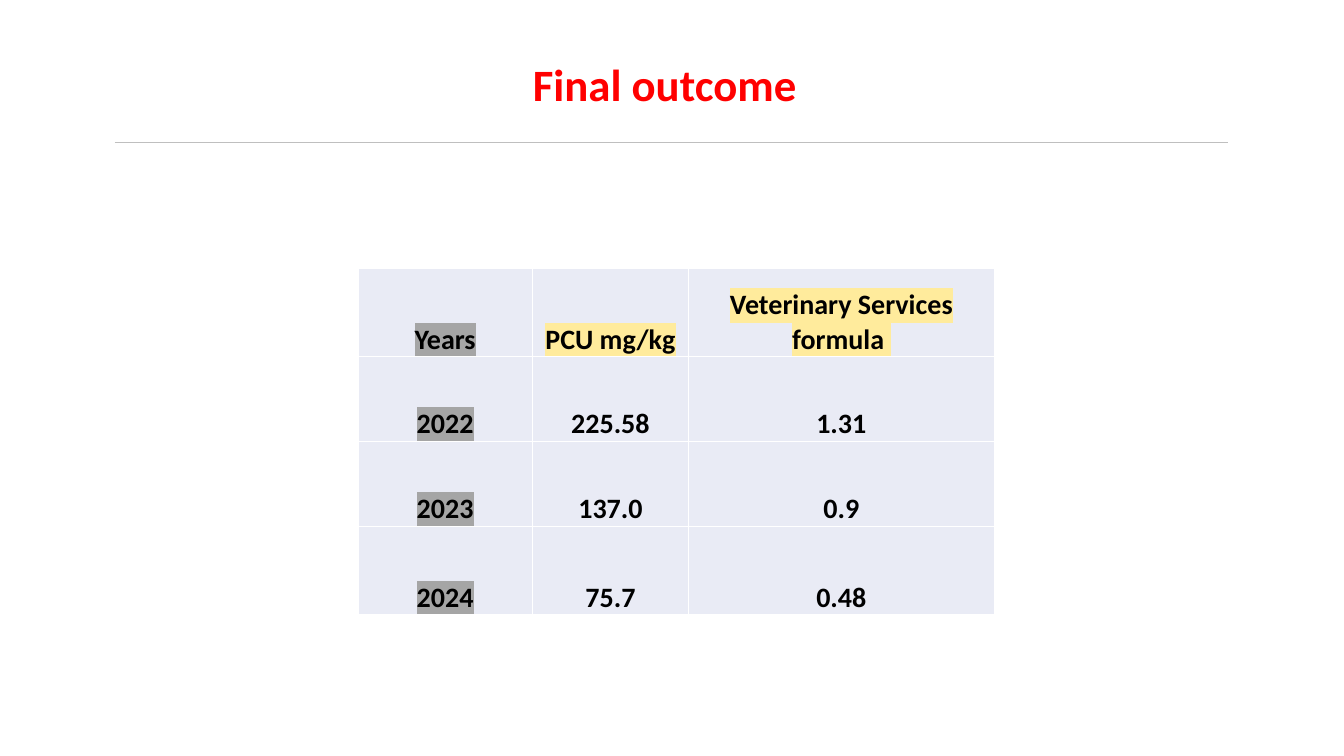
import pptx
import pptx.dml.color
import pptx.enum.shapes
import pptx.enum.text
import pptx.oxml.ns
import pptx.util
from lxml import etree

Inches = pptx.util.Inches
Pt = pptx.util.Pt
COLORS = {
    "title": "FF0000",
    "rule": "BFBFBF",
    "text": "000000",
    "cell": "E9EBF5",
    "border": "FFFFFF",
    "year": "A5A5A5",
    "heading": "FFEB9C",
}
ROWS = [
    ["Years", "PCU mg/kg", "Veterinary Services formula "],
    ["2022", "225.58", "1.31"],
    ["2023", "137.0", "0.9"],
    ["2024", "75.7", "0.48"],
]
COLUMN_WIDTHS = [1.73, 1.55, 3.03]
ROW_HEIGHTS = [0.88, 0.84, 0.84, 0.88]


def add_color(parent, tag, color):
    element = etree.SubElement(parent, pptx.oxml.ns.qn(tag))
    etree.SubElement(element, pptx.oxml.ns.qn("a:srgbClr"), val=COLORS[color])
    return element


def style_paragraph(para, size, color):
    para.alignment = pptx.enum.text.PP_ALIGN.CENTER
    para.font.size = Pt(size)
    para.font.name = "Calibri"
    para.font.bold = True
    para.font.color.rgb = pptx.dml.color.RGBColor.from_string(COLORS[color])


deck = pptx.Presentation()
deck.slide_width = Inches(13.33)
deck.slide_height = Inches(7.5)
page = deck.slides.add_slide(deck.slide_layouts[5])

rule = page.shapes.add_connector(
    pptx.enum.shapes.MSO_CONNECTOR.STRAIGHT,
    Inches(1.14), Inches(1.41), Inches(12.18), Inches(1.41))
rule.line.color.rgb = pptx.dml.color.RGBColor.from_string(COLORS["rule"])
rule.line.width = Pt(0.5)
etree.SubElement(rule._element.spPr, pptx.oxml.ns.qn("a:effectLst"))

title = page.shapes.title
title.left, title.top = Inches(1.13), Inches(0.57)
title.width, title.height = Inches(11.03), Inches(0.77)
title.text_frame.text = "Final outcome "
title.text_frame.vertical_anchor = pptx.enum.text.MSO_ANCHOR.TOP
title.text_frame.paragraphs[0].line_spacing = 0.9
style_paragraph(title.text_frame.paragraphs[0], 32, "title")

table = page.shapes.add_table(
    len(ROWS), len(COLUMN_WIDTHS), Inches(3.55), Inches(2.66),
    Inches(sum(COLUMN_WIDTHS)), Inches(sum(ROW_HEIGHTS))).table
table.first_row = False
table.horz_banding = False
for column, width in zip(table.columns, COLUMN_WIDTHS):
    column.width = Inches(width)

for row_index, (row, height) in enumerate(zip(ROWS, ROW_HEIGHTS)):
    table.rows[row_index].height = Inches(height)
    for column_index, value in enumerate(row):
        cell = table.cell(row_index, column_index)
        cell.text = value
        cell.vertical_anchor = pptx.enum.text.MSO_ANCHOR.BOTTOM
        cell.margin_left = cell.margin_right = cell.margin_top = Inches(0.01)
        cell.margin_bottom = 0
        properties = cell._tc.get_or_add_tcPr()
        for side in ("a:lnL", "a:lnR", "a:lnT", "a:lnB"):
            border = etree.SubElement(properties, pptx.oxml.ns.qn(side), w=str(Pt(1)))
            add_color(border, "a:solidFill", "border")
        cell.fill.solid()
        cell.fill.fore_color.rgb = pptx.dml.color.RGBColor.from_string(COLORS["cell"])
        para = cell.text_frame.paragraphs[0]
        style_paragraph(para, 20, "text")
        if column_index == 0 or row_index == 0:
            highlight = "year" if column_index == 0 else "heading"
            add_color(para.runs[0]._r.get_or_add_rPr(), "a:highlight", highlight)

deck.save("out.pptx")
